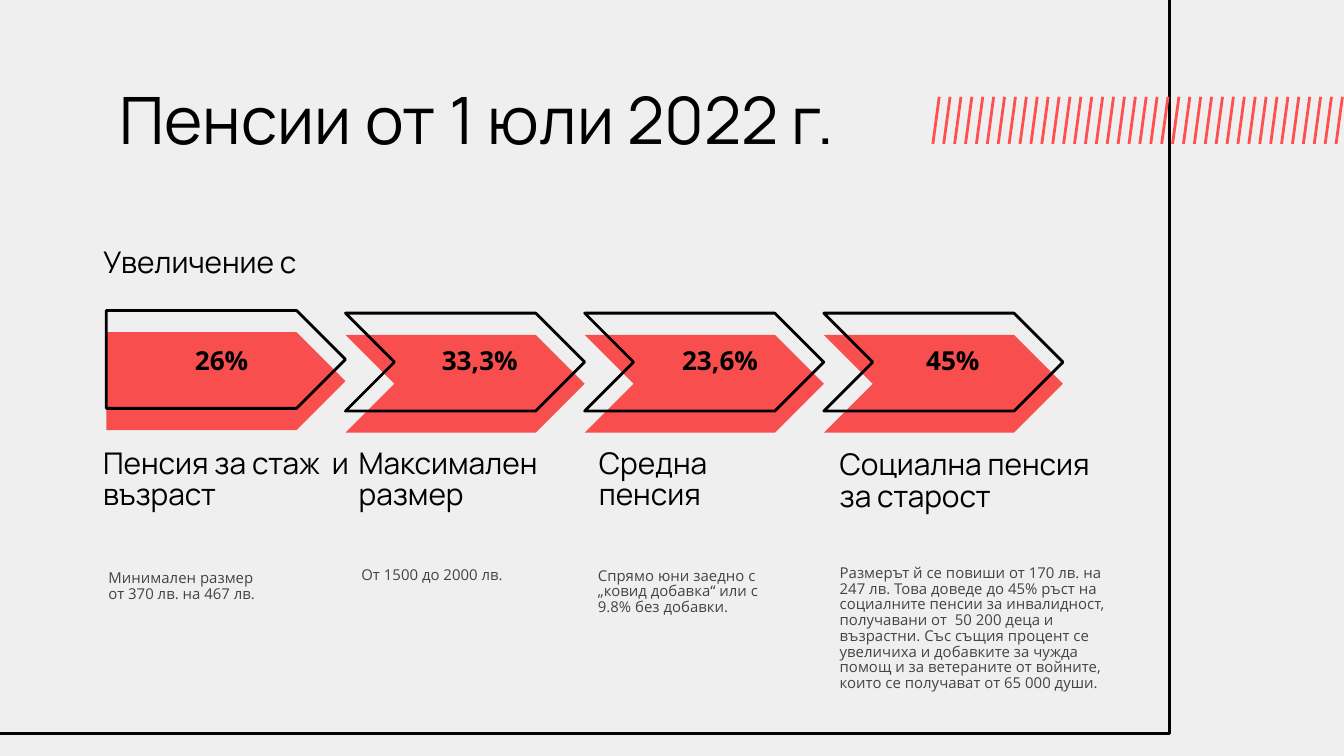
"""Builds a slide on pension increases from 1 July 2022."""
from lxml.etree import SubElement
from pptx import Presentation
from pptx.dml.color import RGBColor
from pptx.enum.shapes import MSO_CONNECTOR, MSO_SHAPE
from pptx.enum.text import MSO_ANCHOR, MSO_AUTO_SIZE, PP_ALIGN
from pptx.oxml.ns import qn
from pptx.util import Cm, Pt

COLORS = {"bg": "EFEFEF", "black": "000000", "stripe": "FF4F4F",
          "arrow": "FF0000", "note": "434343"}
HEAD_FONT, BODY_FONT = "Manrope", "Open Sans"

TITLE = "Пенсии от 1 юли 2022 г."
SUBTITLE = "Увеличение с"

STEPS = [
    {"shape": MSO_SHAPE.PENTAGON, "top": 5.87,
     "percent": "26%", "percent_mid": 4.19,
     "label": "Пенсия за стаж  и възраст", "label_box": (1.7, 7.9, 5.3, 2.03),
     "note": "Минимален размер\nот 370 лв. на 467 лв.",
     "note_box": (1.8, 9.8, 3.68, 2.59)},
    {"shape": MSO_SHAPE.CHEVRON, "top": 5.92,
     "percent": "33,3%", "percent_mid": 9.07,
     "label": "Максимален размер", "label_box": (6.53, 7.9, 4.06, 2.03),
     "note": "От 1500 до 2000 лв.",
     "note_box": (6.58, 9.58, 3.68, 2.59)},
    {"shape": MSO_SHAPE.CHEVRON, "top": 5.92,
     "percent": "23,6%", "percent_mid": 13.61,
     "label": "Средна пенсия", "label_box": (11.07, 7.9, 4.09, 2.03),
     "note": "Спрямо юни заедно с „ковид добавка“ или с 9.8% без добавки.",
     "note_box": (11.05, 9.9, 3.68, 2.59)},
    {"shape": MSO_SHAPE.CHEVRON, "top": 5.92,
     "percent": "45%", "percent_mid": 18.01,
     "label": "Социална пенсия за старост", "label_box": (15.62, 7.93, 5.64, 2.03),
     "note": "Размерът й се повиши от 170 лв. на 247 лв. Това доведе до 45% ръст "
             "на социалните пенсии за инвалидност, получавани от  50 200 деца и "
             "възрастни. Със същия процент се увеличиха и добавките за чужда "
             "помощ и за ветераните от войните, които се получават от 65 000 души.",
     "note_box": (15.62, 10.59, 5.64, 2.59)},
]

ARROW_LEFT, ARROW_W, ARROW_H, ARROW_DROP = 2.01, 4.52, 1.85, 0.41
STRIPES, STRIPE_FIRST, STRIPE_LAST = 38, 17.75, 25.37
STRIPE_TOP, STRIPE_BOTTOM, STRIPE_SLANT = 1.83, 2.72, 0.12


def color(name):
    return RGBColor.from_string(COLORS[name])


def write(sp, text, size, font, ink="black", bold=False,
          align=PP_ALIGN.LEFT, anchor=MSO_ANCHOR.MIDDLE, spacing=0.88):
    tf = sp.text_frame
    tf.text = text
    tf.word_wrap = True
    tf.auto_size = MSO_AUTO_SIZE.NONE
    tf.vertical_anchor = anchor
    tf.margin_left = tf.margin_right = tf.margin_top = tf.margin_bottom = Cm(0.25)
    for p in tf.paragraphs:
        p.alignment = align
        p.line_spacing = spacing
        p.space_before = p.space_after = Pt(0)
        for r in p.runs:
            r.font.name = font
            r.font.size = Pt(size)
            r.font.bold = bold
            r.font.color.rgb = color(ink)


def add_text(s, box, *args, **kwargs):
    write(s.shapes.add_textbox(*map(Cm, box)), *args, **kwargs)


def add_outline(s, shape, box):
    sp = s.shapes.add_shape(shape, *map(Cm, box))
    sp.shadow.inherit = False
    sp.fill.background()
    sp.line.color.rgb = color("black")
    sp.line.width = Pt(1.5)


def add_tinted(s, shape, box):
    sp = s.shapes.add_shape(shape, *map(Cm, box))
    sp.shadow.inherit = False
    sp.fill.solid()
    sp.fill.fore_color.rgb = color("arrow")
    sp.line.fill.background()
    rgb = sp.fill._xPr.find(qn("a:solidFill")).find(qn("a:srgbClr"))
    SubElement(rgb, qn("a:alpha")).set("val", "67000")


def add_stripes(s):
    pitch = (STRIPE_LAST - STRIPE_FIRST) / (STRIPES - 1)
    for i in range(STRIPES):
        x = STRIPE_FIRST + i * pitch
        line = s.shapes.add_connector(MSO_CONNECTOR.STRAIGHT, Cm(x), Cm(STRIPE_TOP),
                                      Cm(x - STRIPE_SLANT), Cm(STRIPE_BOTTOM))
        line.line.color.rgb = color("stripe")
        line.line.width = Pt(1.5)
        SubElement(line._element.spPr, qn("a:effectLst"))


def add_step(s, index, step):
    left, top = ARROW_LEFT + index * ARROW_W, step["top"]
    add_tinted(s, step["shape"], (left, top + ARROW_DROP, ARROW_W, ARROW_H))
    add_outline(s, step["shape"], (left, top, ARROW_W, ARROW_H))
    add_text(s, (step["percent_mid"] - 1.2, 6.45, 2.4, 0.79), step["percent"],
             14, BODY_FONT, bold=True, align=PP_ALIGN.CENTER)
    add_text(s, step["label_box"], step["label"], 16, HEAD_FONT,
             anchor=MSO_ANCHOR.BOTTOM)
    add_text(s, step["note_box"], step["note"], 8, BODY_FONT, "note")


def main():
    prs = Presentation()
    prs.slide_width, prs.slide_height = Cm(25.4), Cm(14.29)
    s = prs.slides.add_slide(prs.slide_layouts[5])
    s.background.fill.solid()
    s.background.fill.fore_color.rgb = color("bg")

    add_outline(s, MSO_SHAPE.RECTANGLE, (-0.29, -0.29, 22.4, 14.15))
    add_stripes(s)

    title = s.shapes.title
    title.left, title.top, title.width, title.height = map(Cm, (2.01, 1.24, 21.41, 1.6))
    write(title, TITLE, 35, HEAD_FONT, anchor=MSO_ANCHOR.TOP, spacing=1)

    add_text(s, (1.7, 4.38, 5.18, 1.22), SUBTITLE, 16, HEAD_FONT)
    for index, step in enumerate(STEPS):
        add_step(s, index, step)
    prs.save("out.pptx")


if __name__ == "__main__":
    main()
